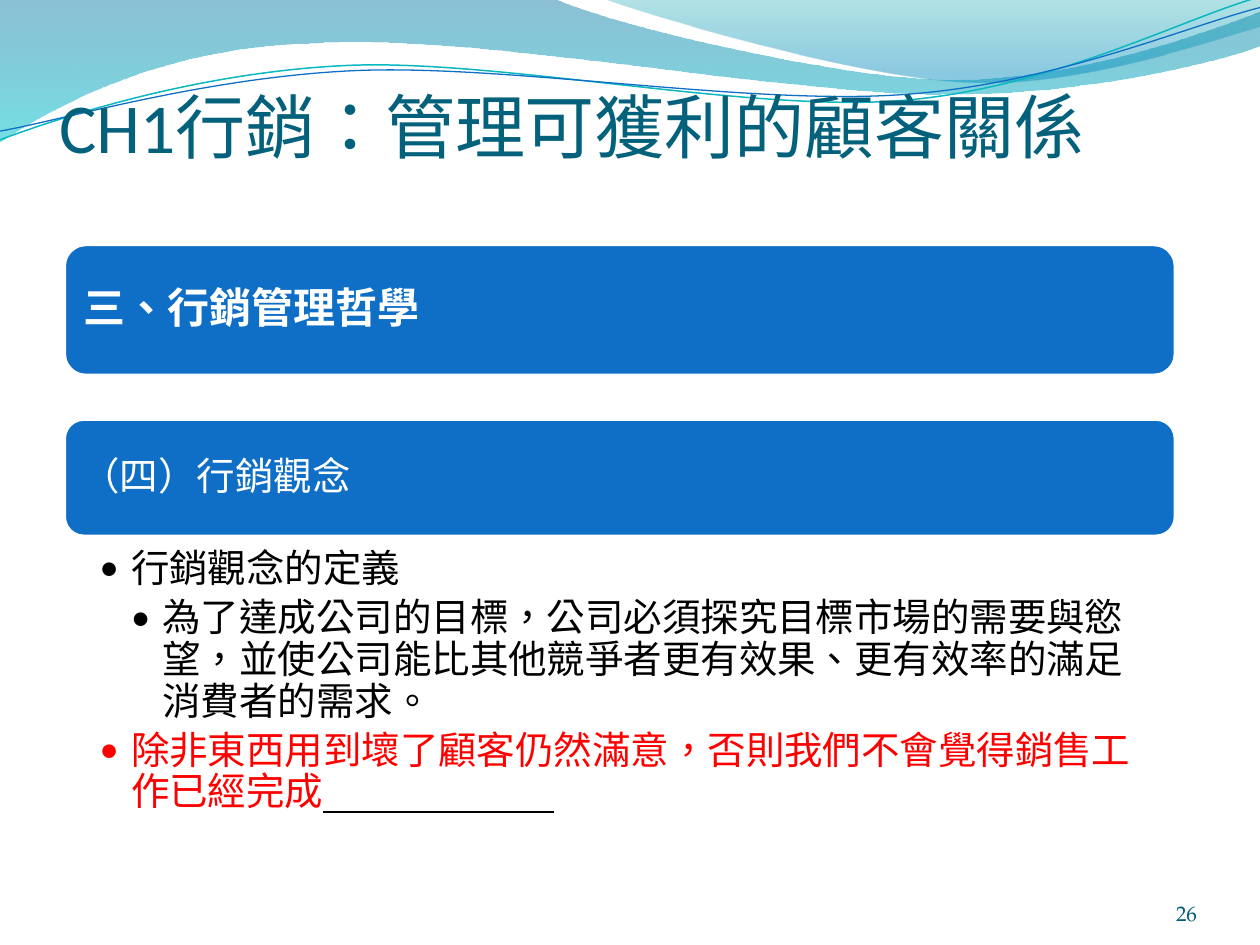
from dataclasses import dataclass

from lxml import etree
from pptx import Presentation
from pptx.dml.color import RGBColor
from pptx.enum import lang, shapes, text
from pptx.oxml import ns
from pptx.util import Pt


@dataclass(frozen=True)
class Theme:
    blue: str = "0F6FC6"
    teal: str = "0AB8BF"
    title_ink: str = "04617B"
    number_ink: str = "045D75"
    white: str = "FFFFFF"
    black: str = "000000"
    red: str = "FF0000"
    serif: str = "TeX Gyre Pagella"
    sans: str = "Calibri"
    cjk: str = "Noto Sans CJK SC"
    title: float = 40
    heading: float = 24
    body: float = 22
    number: float = 12


THEME = Theme()

# Curves: a start point, then segments of one point (line) or three (Bézier).
BROAD_WAVE = [[(0, 0)], [(316.8, -0.7)],
              [(342.7, 12.2), (478.1, 45.4), (545.8, 45.4)],
              [(614.2, 45.4), (689.8, 18.7), (720, 6.5)], [(720.7, 25.9)],
              [(707.8, 31.7), (626.4, 54.7), (537.1, 54)],
              [(447.8, 54), (275, 20.2), (185, 24.5)],
              [(92.9, 25.9), (33.1, 59.8), (-0.7, 81.4)], [(0, 0)]]
RIGHT_WAVE = [[(344.9, -0.7)],
              [(366.5, 7.9), (491, 44.6), (553.7, 46.8)],
              [(616.3, 49.7), (691.9, 23), (720, 15.1)], [(720, 0)], [(344.9, -0.7)]]
TEAL_LINE = [[(0, 79.9)],
             [(34.6, 67), (113.8, 41), (199.4, 37.4)],
             [(284.4, 33.8), (427, 64.1), (513.4, 57.6)],
             [(599.8, 51.1), (675.4, 10.8), (718.6, -1.4)]]
BLUE_LINE = [[(0, 74.9)],
             [(33.8, 69.1), (118.1, 43.9), (203.8, 40.3)],
             [(290.2, 36.7), (429.8, 60.5), (516.2, 54)],
             [(601.9, 48.2), (677.5, 15.1), (720, 4.3)]]


def rgb(value):
    return RGBColor.from_string(value)


class SlideBuilder:
    def __init__(self, slide, theme):
        self.slide = slide
        self.theme = theme

    def curve(self, outline, closed):
        """Freeform whose three-point segments become Bézier curves."""
        track = [(Pt(x), Pt(y)) for segment in outline for x, y in segment]
        builder = self.slide.shapes.build_freeform(*track[0], scale=1.0)
        builder.add_line_segments(track[1:], close=closed)
        shape = builder.convert_to_shape()
        shape.shadow.inherit = False
        lines = iter(list(shape._element.iter(ns.qn("a:lnTo"))))
        for segment in outline[1:]:
            first, *others = [next(lines) for _ in segment]
            if others:
                bend = first.makeelement(ns.qn("a:cubicBezTo"), {})
                first.addprevious(bend)
                for line in (first, *others):
                    bend.append(line[0])
                    line.getparent().remove(line)
        return shape

    def wave(self, outline, stops):
        """Gradient area; each stop is (position, colour, opacity in percent)."""
        shape = self.curve(outline, True)
        shape.line.fill.background()
        shape.fill.gradient()
        shape.fill.gradient_angle = 270
        for stop, (position, color, _) in zip(shape.fill.gradient_stops, stops):
            stop.position = position
            stop.color.rgb = rgb(color)
        colors = shape._element.spPr.iter(ns.qn("a:srgbClr"))
        for element, (_, _, opacity) in zip(colors, stops):
            etree.SubElement(element, ns.qn("a:alpha"), val=str(opacity * 1000))

    def strand(self, outline, color, width):
        shape = self.curve(outline, False)
        shape.fill.background()
        shape.line.color.rgb = rgb(color)
        shape.line.width = Pt(width)

    def text_box(self, box, margins=(0, 0, 0, 0), anchor=text.MSO_ANCHOR.TOP):
        frame = self.slide.shapes.add_textbox(*map(Pt, box)).text_frame
        sides = ("margin_left", "margin_top", "margin_right", "margin_bottom")
        settings = dict(zip(sides, map(Pt, margins)), word_wrap=True, vertical_anchor=anchor)
        for name, value in settings.items():
            setattr(frame, name, value)
        return frame

    def run(self, paragraph, words, size, color, font=None, **style):
        run = paragraph.add_run()
        run.text = words
        settings = {"name": font or self.theme.serif, "size": Pt(size),
                    "language_id": lang.MSO_LANGUAGE_ID.TRADITIONAL_CHINESE, **style}
        for name, value in settings.items():
            setattr(run.font, name, value)
        run.font.color.rgb = rgb(color)
        latin = run.font._element.find(ns.qn("a:latin"))
        latin.addnext(latin.makeelement(ns.qn("a:ea"), {"typeface": self.theme.cjk}))

    def bar(self, box, label_box, words, size, margin, **style):
        shape = self.slide.shapes.add_shape(
            shapes.MSO_SHAPE.ROUNDED_RECTANGLE, *map(Pt, box))
        shape.shadow.inherit = False
        shape.fill.solid()
        shape.fill.fore_color.rgb = rgb(self.theme.blue)
        shape.line.color.rgb = rgb(self.theme.white)
        shape.line.width = Pt(2)
        label = self.text_box(label_box, [margin] * 4, text.MSO_ANCHOR.MIDDLE).paragraphs[0]
        label.line_spacing = 0.9
        label.space_after = Pt(0.35 * size)
        self.run(label, words, size, self.theme.white, **style)

    def bullets(self, box, margins, items):
        """Each item is (level, runs), each run a dict of run() arguments."""
        frame = self.text_box(box, margins)
        for index, (level, runs) in enumerate(items):
            paragraph = frame.add_paragraph() if index else frame.paragraphs[0]
            settings = {"level": level, "line_spacing": 0.9, "space_after": Pt(4.4)}
            for name, value in settings.items():
                setattr(paragraph, name, value)
            properties = paragraph._p.get_or_add_pPr()
            properties.set("marL", str(Pt(18 * level)))
            properties.set("indent", str(Pt(-18)))
            etree.SubElement(properties, ns.qn("a:buFont"), typeface=self.theme.sans)
            etree.SubElement(properties, ns.qn("a:buChar"), char="•")
            for run in runs:
                self.run(paragraph, size=self.theme.body, **run)


def main():
    deck = Presentation()
    deck.slide_width, deck.slide_height = Pt(720), Pt(540)
    page = SlideBuilder(deck.slides.add_slide(deck.slide_layouts[6]), THEME)

    page.wave(BROAD_WAVE, [(0, "0074A1", 45), (1, "00C6CF", 55)])
    page.wave(RIGHT_WAVE, [(0, "00A1A9", 30), (0.8, "008BBF", 45)])
    page.strand(TEAL_LINE, THEME.teal, 0.85)
    page.strand(BLUE_LINE, THEME.blue, 0.75)

    number = page.text_box((624.2, 500.4, 59.8, 28.8), anchor=text.MSO_ANCHOR.BOTTOM)
    number.paragraphs[0].alignment = text.PP_ALIGN.RIGHT
    page.run(number.paragraphs[0], "26", THEME.number, THEME.number_ink)

    left, width = 36.7, 635
    page.bar((left, 139.7, width, 74.9), (40.4, 143.3, 627.8, 67.6),
             "三、行銷管理哲學", THEME.heading, 7.2, bold=True)
    page.bar((left, 239.5, width, 67), (40, 242.8, 628.5, 60.4),
             "（四）行銷觀念", THEME.body, 6.6)
    definition = ("為了達成公司的目標，公司必須探究目標市場的需要與慾望，"
                  "並使公司能比其他競爭者更有效果、更有效率的滿足消費者的需求。")
    motto = "除非東西用到壞了顧客仍然滿意，否則我們不會覺得銷售工作已經完成"
    answer_blank = "　" * 6
    page.bullets((left, 311.8, width, 175), (20.2, 2.2, 12.2, 2.2), [
        (1, [dict(words="行銷觀念的定義", color=THEME.black)]),
        (2, [dict(words=definition, color=THEME.black)]),
        (1, [dict(words=motto, color=THEME.red, font=THEME.cjk),
             dict(words=answer_blank, color=THEME.black, underline=True)]),
    ])

    title = page.text_box((33.8, 22.3, 635.8, 95.8), (0, 3.6, 0, 0), text.MSO_ANCHOR.MIDDLE)
    page.run(title.paragraphs[0], "CH1行銷：管理可獲利的顧客關係",
             THEME.title, THEME.title_ink, THEME.sans)

    deck.save("out.pptx")


if __name__ == "__main__":
    main()
